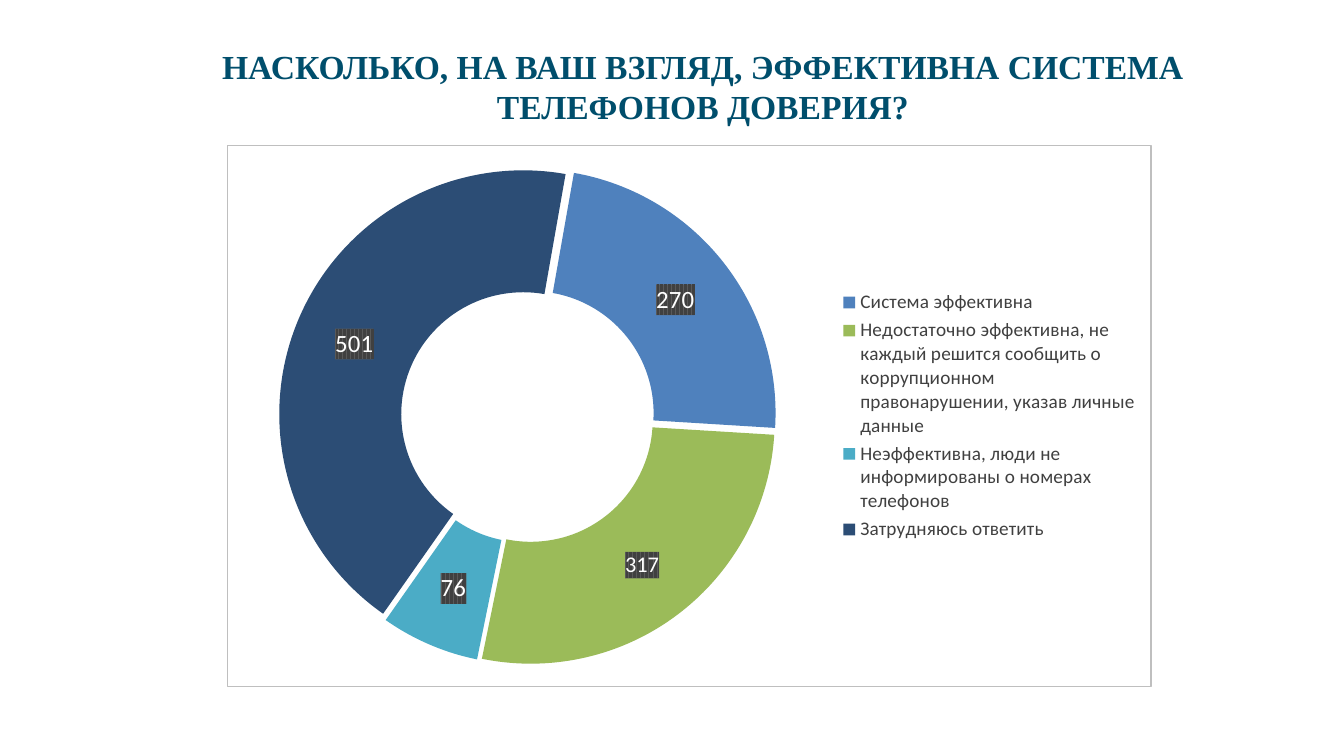
from lxml.etree import SubElement
from pptx import Presentation
from pptx.chart.data import CategoryChartData as Data
from pptx.dml.color import RGBColor as RGB
from pptx.enum.chart import XL_CHART_TYPE as Kind, XL_LEGEND_POSITION as Side
from pptx.enum.text import MSO_ANCHOR as Anchor, PP_ALIGN as Align
from pptx.oxml import parse_xml
from pptx.oxml.ns import nsdecls, qn
from pptx.util import Cm, Pt

TITLE = "НАСКОЛЬКО, НА ВАШ ВЗГЛЯД, ЭФФЕКТИВНА СИСТЕМА ТЕЛЕФОНОВ ДОВЕРИЯ?"
TEAL = RGB(0x00, 0x4E, 0x6C)
BLACK = RGB(0x00, 0x00, 0x00)
WHITE = RGB(0xFF, 0xFF, 0xFF)
GREY = RGB(0x40, 0x40, 0x40)
DARK = RGB(0x59, 0x59, 0x59)
EDGE = RGB(0xBF, 0xBF, 0xBF)
BLUE = RGB(0x4F, 0x81, 0xBD)
GREEN = RGB(0x9B, 0xBB, 0x59)
AQUA = RGB(0x4B, 0xAC, 0xC6)
NAVY = RGB(0x2C, 0x4D, 0x75)

ANSWERS = [
    ("Система эффективна", 270, BLUE),
    ("Недостаточно эффективна, не каждый решится сообщить о коррупционном "
     "правонарушении, указав личные данные", 317, GREEN),
    ("Неэффективна, люди не информированы о номерах телефонов", 76, AQUA),
    ("Затрудняюсь ответить", 501, NAVY),
]
RING = {"x": 0.05, "y": 0.04, "w": 0.55, "h": 0.92}
KEY = {"x": 0.66, "y": 0.26, "w": 0.33, "h": 0.48}


def style(font, size, color, name="Calibri", bold=False):
    font.size, font.name, font.bold = Pt(size), name, bold
    font.color.rgb = color


def layout(area, inner=False):
    part = parse_xml(f"<c:layout {nsdecls('c')}/>")
    box = SubElement(part, qn("c:manualLayout"))
    if inner:
        SubElement(box, qn("c:layoutTarget"), val="inner")
    for key in "xy":
        SubElement(box, qn(f"c:{key}Mode"), val="edge")
    for key, size in area.items():
        SubElement(box, qn(f"c:{key}"), val=str(size))
    return part


def place(parent, part, before):
    for old in parent.findall(qn("c:layout")):
        parent.remove(old)
    parent.find(qn(before)).addprevious(part)


deck = Presentation()
deck.slide_width, deck.slide_height = Cm(25.4), Cm(14.28)
slide = deck.slides.add_slide(deck.slide_layouts[5])

title = slide.shapes.title
title.left, title.top, title.width, title.height = Cm(2.49), Cm(0.74), Cm(21.59), Cm(2.84)
frame = title.text_frame
frame.text = TITLE
frame.word_wrap, frame.vertical_anchor = True, Anchor.TOP
head = frame.paragraphs[0]
head.alignment = Align.CENTER
style(head.runs[0].font, 18, TEAL, "Times New Roman", True)

data = Data()
data.categories = [name for name, _, _ in ANSWERS]
data.add_series("Series 1", [count for _, count, _ in ANSWERS])
chart = slide.shapes.add_chart(
    Kind.DOUGHNUT, Cm(4.29), Cm(2.74), Cm(17.48), Cm(10.24), data).chart
chart.has_title = False
style(chart.font, 10, BLACK)

chart.has_legend = True
legend = chart.legend
legend.position, legend.include_in_layout = Side.RIGHT, False
style(legend.font, 10.3, GREY)
root = chart.element
place(root.find(".//" + qn("c:legend")), layout(KEY), "c:overlay")
place(root.find(".//" + qn("c:plotArea")), layout(RING, True), "c:doughnutChart")

plot = chart.plots[0]
plot.vary_by_categories = True
root.find(".//" + qn("c:firstSliceAng")).set("val", "10")
root.find(".//" + qn("c:holeSize")).set("val", "50")

votes = plot.series[0]
for spot, (_, _, color) in enumerate(ANSWERS):
    fill = votes.points[spot].format.fill
    fill.solid()
    fill.fore_color.rgb = color
votes.data_labels.show_value = True
style(votes.data_labels.font, 13.3, WHITE)
style(votes.points[1].data_label.font, 12, WHITE)

ring = root.find(".//" + qn("c:ser"))
ring.find(qn("c:dPt")).addprevious(
    parse_xml(f'<c:explosion {nsdecls("c")} val="4"/>'))
for text in ring.iter(qn("c:txPr")):
    text.addprevious(parse_xml(
        f'<c:spPr {nsdecls("c", "a")}><a:pattFill prst="dkVert">'
        f'<a:fgClr><a:srgbClr val="{GREY}"/></a:fgClr>'
        f'<a:bgClr><a:srgbClr val="{DARK}"/></a:bgClr></a:pattFill></c:spPr>'))

root.find(qn("c:txPr")).addprevious(parse_xml(
    f'<c:spPr {nsdecls("c", "a")}><a:solidFill><a:srgbClr val="{WHITE}"/></a:solidFill>'
    f'<a:ln w="{Pt(0.75)}"><a:solidFill><a:srgbClr val="{EDGE}"/></a:solidFill></a:ln></c:spPr>'))

deck.save("out.pptx")
